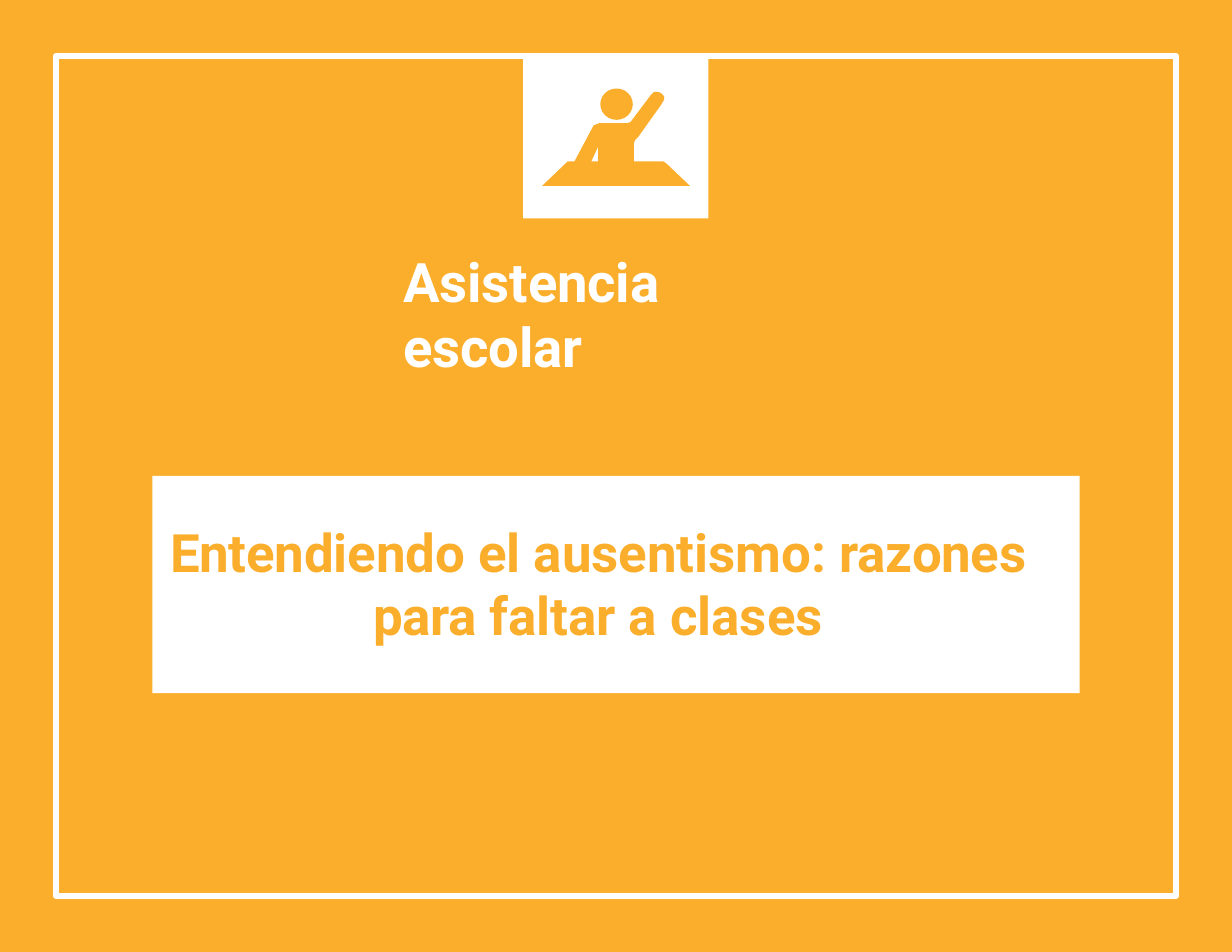
from dataclasses import dataclass
from typing import NamedTuple

from pptx import Presentation
from pptx.dml.color import RGBColor
from pptx.enum.shapes import MSO_SHAPE as Preset
from pptx.enum.text import MSO_ANCHOR as Anchor, MSO_AUTO_SIZE as AutoSize, PP_ALIGN as Align
from pptx.util import Inches, Pt

COLUMNS, ROWS, CELL = 22, 17, Inches(0.5)
ICON_UNIT = CELL / 50


@dataclass(frozen=True)
class Theme:
    amber: RGBColor = RGBColor(0xFB, 0xAE, 0x2B)
    white: RGBColor = RGBColor(0xFF, 0xFF, 0xFF)
    font: str = "Roboto"
    title_size: int = 35
    banner_size: int = 34
    frame_width: int = 4


class Area(NamedTuple):
    column: float
    row: float
    columns: float
    rows: float

    def emu(self) -> tuple[int, ...]:
        return tuple(round(cells * CELL) for cells in self)


class Phrase(NamedTuple):
    text: str
    spacing: float = 0


THEME = Theme()
FRAME = Area(1, 1, COLUMNS - 2, ROWS - 2)
BADGE = Area(9.34, 1, 3.31, 2.9)
HEAD = Area(10.72, 1.58, 0.58, 0.56)
TITLE = Area(7.18, 4.38, 7.64, 1.22)
BANNER = Area(2.72, 8.5, 16.56, 3.88)

TITLE_PHRASES = [Phrase("Asistencia escolar", -0.1)]
BANNER_PHRASES = [
    Phrase("Entendiendo ", -0.1),
    Phrase("el ausentismo: "),
    Phrase("razones para ", -0.2),
    Phrase("faltar ", -0.1),
    Phrase("a clases"),
]

STUDENT_AT_DESK = [
    (484, 166), (507, 144), (513, 144), (530, 112), (535, 110), (560, 110),
    (563, 109), (581, 85), (584, 82), (587, 82), (590, 83), (593, 86),
    (593, 89), (590, 94), (570, 122), (567, 125), (566, 128), (566, 144),
    (592, 144), (595, 146), (616, 166),
]
ARM_GAP = [(528, 144), (534, 131), (534, 144)]


def paint(shape, color: RGBColor) -> None:
    shape.shadow.inherit = False
    shape.fill.solid()
    shape.fill.fore_color.rgb = color
    shape.line.fill.background()


def add_block(slide, preset: Preset, area: Area, color: RGBColor):
    block = slide.shapes.add_shape(preset, *area.emu())
    paint(block, color)
    return block


def add_frame(slide, area: Area) -> None:
    frame = slide.shapes.add_shape(Preset.RECTANGLE, *area.emu())
    frame.shadow.inherit = False
    frame.fill.background()
    frame.line.color.rgb = THEME.white
    frame.line.width = Pt(THEME.frame_width)


def add_student(slide) -> None:
    outline = slide.shapes.build_freeform(*STUDENT_AT_DESK[0], scale=ICON_UNIT)
    outline.add_line_segments(STUDENT_AT_DESK[1:])
    outline.move_to(*ARM_GAP[0])
    outline.add_line_segments(ARM_GAP[1:])
    paint(outline.convert_to_shape(), THEME.amber)
    add_block(slide, Preset.OVAL, HEAD, THEME.amber)


def write(shape, phrases: list[Phrase], size: int, color: RGBColor, align: Align,
          insets: tuple[float, float, float, float]) -> None:
    frame = shape.text_frame
    frame.word_wrap = True
    frame.auto_size = AutoSize.SHAPE_TO_FIT_TEXT
    frame.vertical_anchor = Anchor.TOP
    frame.margin_left, frame.margin_top, frame.margin_right, frame.margin_bottom = map(Inches, insets)
    paragraph = frame.paragraphs[0]
    paragraph.alignment = align
    for phrase in phrases:
        run = paragraph.add_run()
        run.text = phrase.text
        run.font.name = THEME.font
        run.font.size = Pt(size)
        run.font.bold = True
        run.font.color.rgb = color
        run._r.get_or_add_rPr().set("spc", str(round(phrase.spacing * 100)))


def main() -> None:
    deck = Presentation()
    deck.slide_width, deck.slide_height = COLUMNS * CELL, ROWS * CELL
    slide = deck.slides.add_slide(deck.slide_layouts[5])
    slide.background.fill.solid()
    slide.background.fill.fore_color.rgb = THEME.amber

    title = slide.shapes.title
    title.left, title.top, title.width, title.height = TITLE.emu()
    write(title, TITLE_PHRASES, THEME.title_size, THEME.white, Align.LEFT, (0.01, 0.02, 0, 0))

    add_frame(slide, FRAME)
    add_block(slide, Preset.RECTANGLE, BADGE, THEME.white)
    add_student(slide)
    banner = add_block(slide, Preset.RECTANGLE, BANNER, THEME.white)
    write(banner, BANNER_PHRASES, THEME.banner_size, THEME.amber, Align.CENTER, (0, 0.39, 0.32, 0.39))

    deck.save("out.pptx")


if __name__ == "__main__":
    main()
